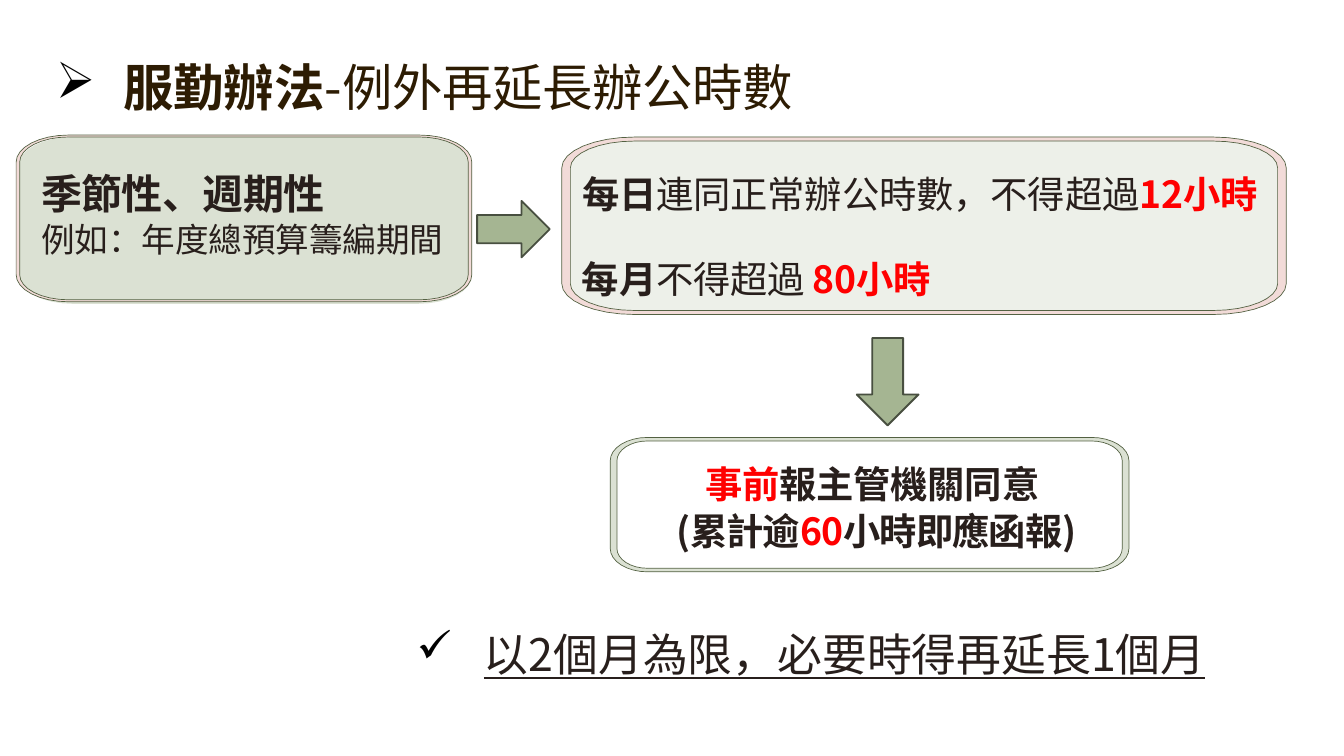
from math import cos, pi, sin
from lxml.etree import SubElement
from pptx import Presentation
from pptx.dml.color import RGBColor
from pptx.enum.shapes import MSO_SHAPE
from pptx.enum.text import MSO_AUTO_SIZE, PP_ALIGN
from pptx.oxml.ns import qn
from pptx.util import Pt

COLORS = {
    "ink": "281F1C", "title": "2D1C03", "red": "FF0000", "black": "000000",
    "pale": "EDF0E9", "sage": "DBE1D3", "pink": "F2DBD8",
    "olive": "536142", "arrow": "A5B592", "edge": "484F40",
}


def color(name):
    return RGBColor.from_string(COLORS[name])


def curve(x, y, w, h, rx, ry, steps=8):
    """Points of a rectangle with elliptic corners, clockwise."""
    hubs = [(x + w - rx, y + ry), (x + w - rx, y + h - ry),
            (x + rx, y + h - ry), (x + rx, y + ry)]
    points = []
    for turn, (cx, cy) in enumerate(hubs):
        for step in range(steps + 1):
            angle = (turn - 1 + step / steps) * pi / 2
            points.append((Pt(cx + rx * cos(angle)), Pt(cy + ry * sin(angle))))
    return points


class Deck:
    font = "Noto Sans CJK TC"

    def __init__(self, wide, high):
        self.file = Presentation()
        self.file.slide_width, self.file.slide_height = Pt(wide), Pt(high)
        self.slide = self.file.slides.add_slide(self.file.slide_layouts[6])
        self.shapes = self.slide.shapes

    def paint(self, shape, fill, line=None, width=0.75):
        shape.shadow.inherit = False
        shape.fill.solid()
        shape.fill.fore_color.rgb = color(fill)
        if line:
            shape.line.color.rgb = color(line)
            shape.line.width = Pt(width)
        else:
            shape.line.fill.background()

    def outline(self, loops, fill, line=None):
        first, *rest = loops
        pen = self.shapes.build_freeform(*first[0])
        pen.add_line_segments(first[1:], close=True)
        for loop in rest:
            pen.move_to(*loop[0])
            pen.add_line_segments(loop[1:], close=True)
        self.paint(pen.convert_to_shape(), fill, line)

    def panel(self, box, round_by, fill):
        self.outline([curve(*box, *round_by)], fill)

    def frame(self, box, round_by, inset, fill):
        (x, y, w, h), (rx, ry), (dx, dy) = box, round_by, inset
        inner = curve(x + dx, y + dy, w - 2 * dx, h - 2 * dy, rx - dx, ry - dy)
        self.outline([curve(*box, rx, ry), inner[::-1]], fill, "olive")

    def arrow(self, kind, *box):
        self.paint(self.shapes.add_shape(kind, *map(Pt, box)), "arrow", "edge", 2)

    def text(self, box, *paras):
        frame = self.shapes.add_textbox(*map(Pt, box)).text_frame
        frame.word_wrap = True
        frame.auto_size = MSO_AUTO_SIZE.SHAPE_TO_FIT_TEXT
        frame.margin_left = frame.margin_right = frame.margin_bottom = 0
        frame.margin_top = Pt(4)
        for index, para in enumerate(paras):
            line = frame.add_paragraph() if index else frame.paragraphs[0]
            self.fill(line, **para)

    def fill(self, line, runs, size, align=PP_ALIGN.LEFT, left=2.2, first=0,
             before=0, bullet=None, under=None):
        line.alignment = align
        line.space_before = Pt(before)
        props = line._p.get_or_add_pPr()
        props.set("marL", str(Pt(left)))
        props.set("indent", str(Pt(first)))
        if bullet:
            tint = SubElement(props, qn("a:buClr"))
            SubElement(tint, qn("a:srgbClr"), val=COLORS["black"])
            SubElement(props, qn("a:buChar"), char=bullet)
            tabs = SubElement(props, qn("a:tabLst"))
            SubElement(tabs, qn("a:tab"), pos=str(Pt(left)), algn="l")
        for words, tone, bold, gap in runs:
            run = line.add_run()
            run.text = words
            font = run.font
            font.name, font.size, font.bold = self.font, Pt(size), bold
            font.underline = under
            font.color.rgb = color(tone)
            look = run._r.get_or_add_rPr()
            look.set("spc", str(round(gap * 100)))
            look.find(qn("a:latin")).addnext(
                look.makeelement(qn("a:ea"), {"typeface": self.font}))


def main():
    deck = Deck(1440, 810)

    # Limits panel and season panel
    deck.panel((608.4, 146.2, 763.2, 188.6), (72, 31.7), "pale")
    deck.frame((601.9, 146.9, 776.2, 190.1), (77.8, 33), (9.2, 4.3), "pink")
    deck.panel((20.2, 146.9, 485.3, 178.6), (57.6, 30), "sage")
    deck.frame((17.3, 144.7, 488.2, 178.6), (56, 29), (3.8, 2.1), "pink")
    deck.text(
        (41.8, 177, 437, 98.6),
        dict(size=44, runs=[("季節性、週期性", "ink", True, -0.7)]),
        dict(size=36, before=0.3,
             runs=[("例如：年度總預算籌編期間", "ink", False, -0.1)]))

    # Consent panel
    deck.text(
        (679, 490.3, 517.7, 100.8),
        dict(size=40, align=PP_ALIGN.CENTER, runs=[
            ("事前", "red", True, -0.3),
            ("報主管機關同", "ink", True, -0.3),
            ("意 ", "ink", True, -1)]),
        dict(size=40, align=PP_ALIGN.CENTER, before=2, runs=[
            ("(累計逾", "ink", True, -1),
            ("60", "red", True, -1),
            ("小時即應函報)", "ink", True, -1)]))
    deck.frame((653.8, 468.7, 555.8, 144), (40, 25), (7.2, 3.8), "sage")

    # Limits text
    deck.text(
        (617.8, 179.3, 792, 142.6),
        dict(size=40, align=PP_ALIGN.JUSTIFY, first=3.6, runs=[
            ("每日", "ink", True, 0),
            ("連同正常", "ink", False, -0.3),
            ("辦公時數，不", "ink", False, -0.2),
            ("得超過", "ink", False, 0),
            ("12", "red", True, -0.2),
            ("小時", "red", True, -0.5)]),
        dict(size=40, left=61.9, first=-56.2, before=42.9, runs=[
            ("每月", "ink", True, 0),
            ("不得超過 ", "ink", False, -0.3),
            ("80", "red", True, -0.2),
            ("小時", "red", True, -0.5)]))

    # Time limit and title
    deck.text(
        (444.2, 667.4, 851.8, 60.5),
        dict(size=48, left=74.2, first=-72, bullet="✓", under=True, runs=[
            ("以2個月為限，必要時得再延⾧1", "ink", False, 0),
            ("個月", "ink", False, -0.5)]))
    deck.text(
        (57.6, 56.2, 1256.4, 67.7),
        dict(size=54, left=74.2, first=-72, bullet="➢", runs=[
            ("服勤辦法", "title", True, 0),
            ("-例外再延⾧辦公時數", "title", False, -0.4)]))

    # Flow arrows
    deck.arrow(MSO_SHAPE.RIGHT_ARROW, 511.2, 215.3, 77.8, 60.5)
    deck.arrow(MSO_SHAPE.DOWN_ARROW, 918, 362.2, 66.2, 93.6)

    deck.file.save("out.pptx")


if __name__ == "__main__":
    main()
